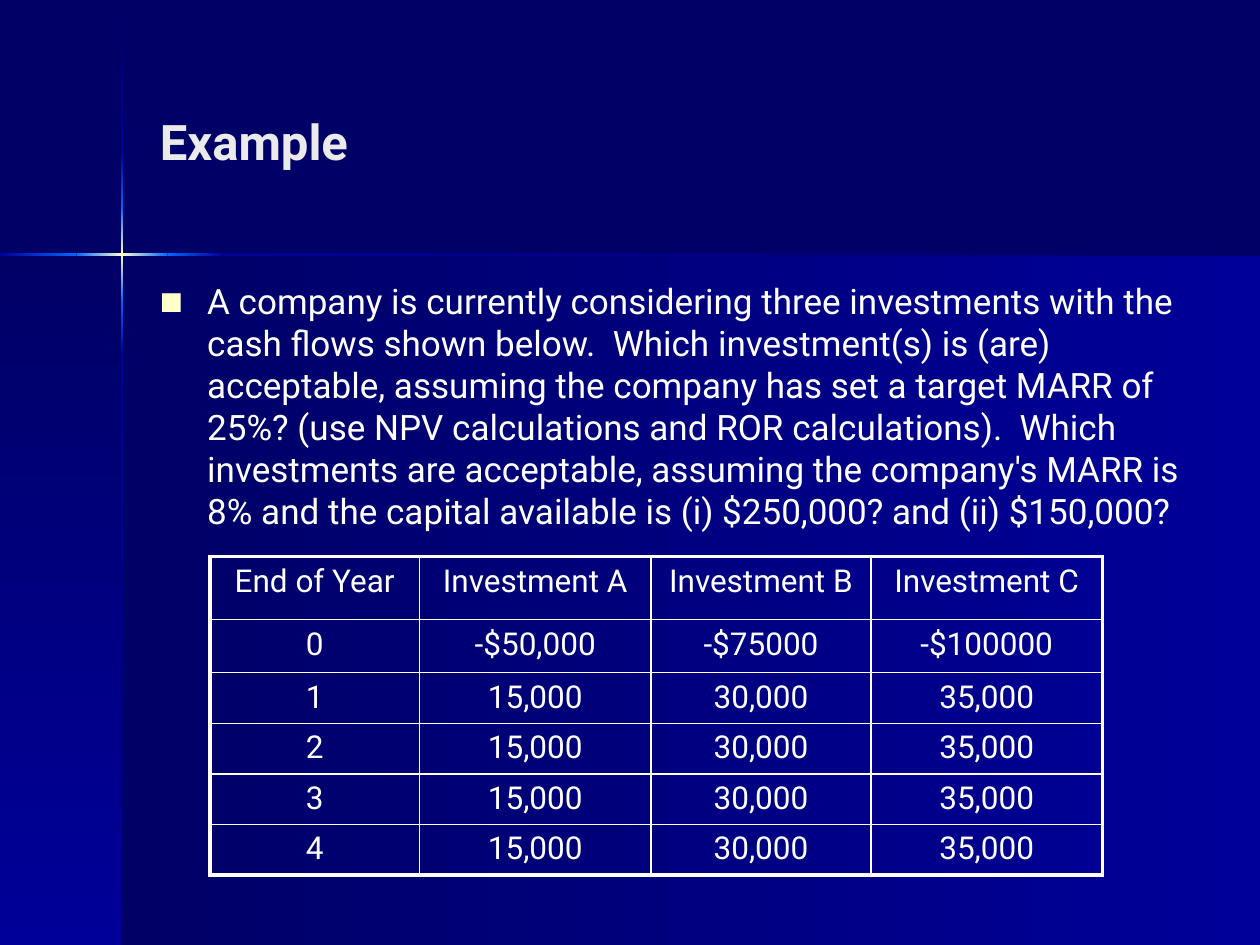
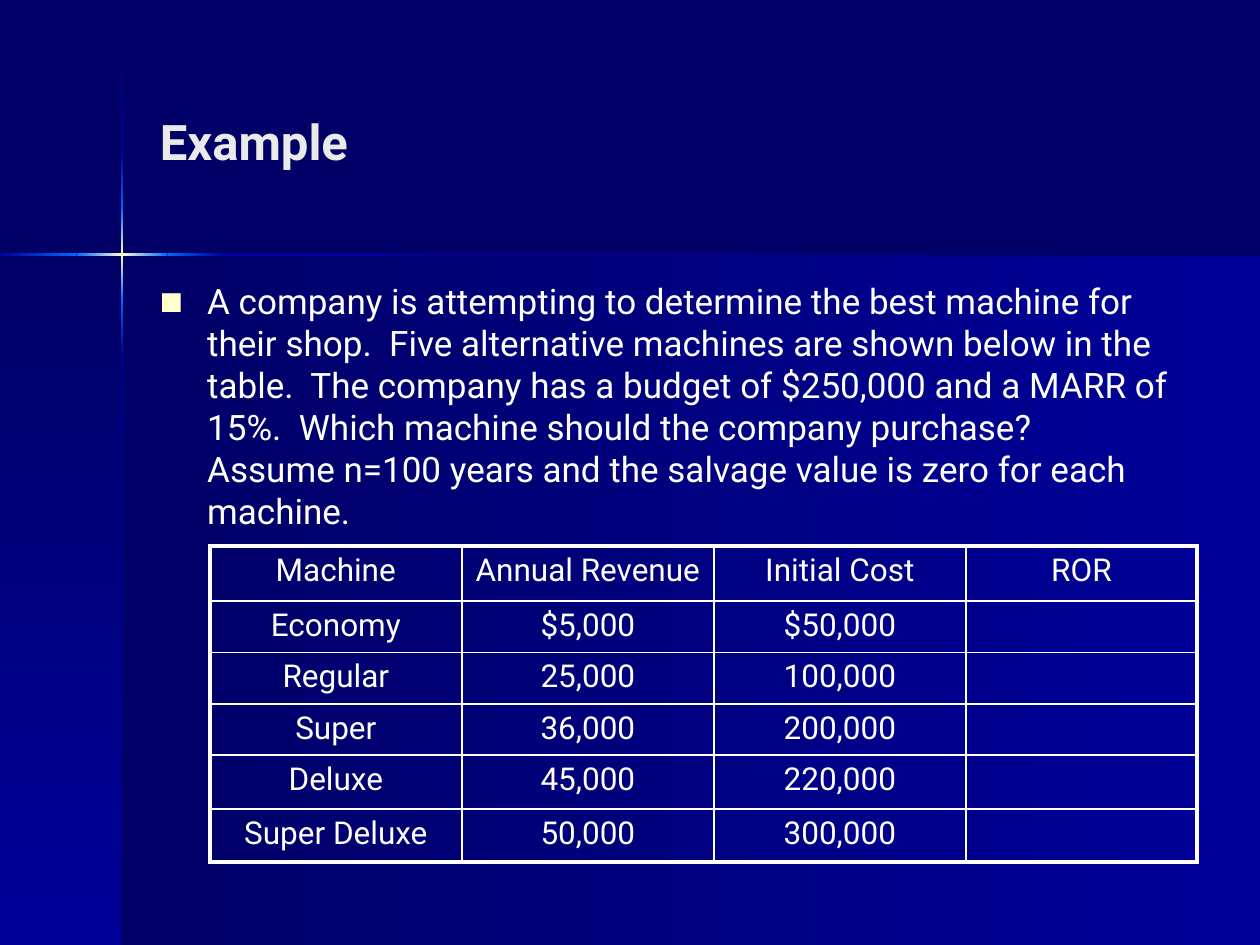
import pptx
import pptx.dml.color
import pptx.enum.shapes
import pptx.enum.text
import pptx.oxml.ns
import pptx.util
from lxml import etree

Cm = pptx.util.Cm
Pt = pptx.util.Pt
RGBColor = pptx.dml.color.RGBColor
qn = pptx.oxml.ns.qn

# Shared look
NAVY = RGBColor(0x00, 0x00, 0x66)
ROYAL = RGBColor(0x00, 0x00, 0x99)
AZURE = RGBColor(0x00, 0x66, 0xFF)
CREAM = RGBColor(0xFF, 0xFF, 0xCC)
PALE = RGBColor(0xEA, 0xEA, 0xEA)
WHITE = RGBColor(0xFF, 0xFF, 0xFF)
FONT = "Roboto"
SLIDE_WIDTH, SLIDE_HEIGHT = 25.4, 19.05
CROSS_X, CROSS_Y = 2.46, 5.13
BEAM = 0.05
THIN, THICK = 1, 2.25

# Beam segments run from each stop to the next
VERTICAL_STOPS = [0.03, 3.07, 4.19, 6.05, 7.16, SLIDE_HEIGHT]
HORIZONTAL_STOPS = [0, 1.54, 3.38, 4.5, SLIDE_WIDTH]
BEAM_COLOURS = [
    (NAVY, ROYAL),
    (ROYAL, AZURE),
    (AZURE, CREAM, AZURE),
    (AZURE, ROYAL),
    (ROYAL, NAVY),
]

# Content
SLIDES = [
    {
        "title": "Example",
        "question": (
            "A company is currently considering three investments with the cash flows "
            "shown below.  Which investment(s) is (are) acceptable, assuming the company "
            "has set a target MARR of 25%? (use NPV calculations and ROR calculations).  "
            "Which investments are acceptable, assuming the company's MARR is 8% and the "
            "capital available is (i) $250,000? and (ii) $150,000?"
        ),
        "body_width": 21.39,
        "table_top": 11.22,
        "columns": [4.23, 4.66, 4.44, 4.66],
        "heights": [1.27, 1.07, 1.02, 1.02, 1.02, 1.02],
        "rows": [
            ("End of Year", "Investment A", "Investment B", "Investment C"),
            ("0", "-$50,000", "-$75000", "-$100000"),
            *[(str(year), "15,000", "30,000", "35,000") for year in range(1, 5)],
        ],
    },
    {
        "title": "Example",
        "question": (
            "A company is attempting to determine the best machine for their shop.  Five "
            "alternative machines are shown below in the table.  The company has a budget "
            "of $250,000 and a MARR of 15%.  Which machine should the company purchase?  "
            "Assume n=100 years and the salvage value is zero for each machine."
        ),
        "body_width": 20.95,
        "table_top": 11.01,
        "columns": [5.08, 5.08, 5.08, 4.66],
        "heights": [1.11, 1.02, 1.04, 1.02, 1.09, 1.07],
        "rows": [
            ("Machine", "Annual Revenue", "Initial Cost", "ROR"),
            ("Economy", "$5,000", "$50,000", ""),
            ("Regular", "25,000", "100,000", ""),
            ("Super", "36,000", "200,000", ""),
            ("Deluxe", "45,000", "220,000", ""),
            ("Super Deluxe", "50,000", "300,000", ""),
        ],
    },
]


def add_element(parent, tag, **attributes):
    return etree.SubElement(parent, qn(tag), attributes)


def add_colour(parent, colour):
    add_element(parent, "a:srgbClr", val=str(colour))


def add_span(para, text, size, colour, bold=False):
    span = para.add_run()
    span.text = text
    span.font.name = FONT
    span.font.size = Pt(size)
    span.font.bold = bold
    span.font.color.rgb = colour


def place(box, left, top, width, height):
    box.left, box.top, box.width, box.height = map(Cm, (left, top, width, height))


def add_band(master, page, left, top, width, height, colours, downward):
    """Draw a gradient band and move it to the master."""
    band = page.shapes.add_shape(
        pptx.enum.shapes.MSO_SHAPE.RECTANGLE, Cm(left), Cm(top), Cm(width), Cm(height))
    band.shadow.inherit = False
    band.line.fill.background()
    band.fill.gradient()
    band.fill.gradient_angle = 270 if downward else 0
    stops = band.element.spPr.find(qn("a:gradFill")).find(qn("a:gsLst"))
    for stop in list(stops):
        stops.remove(stop)
    for index, colour in enumerate(colours):
        position = 100000 * index // (len(colours) - 1)
        add_colour(add_element(stops, "a:gs", pos=str(position)), colour)
    master.shapes.element.append(band.element)


def decorate_master(master, page):
    master.background.fill.solid()
    master.background.fill.fore_color.rgb = NAVY

    # Lower panels
    panel_height = SLIDE_HEIGHT - CROSS_Y
    add_band(master, page, CROSS_X, CROSS_Y, SLIDE_WIDTH - CROSS_X, panel_height,
             (NAVY, ROYAL), False)
    add_band(master, page, 0, CROSS_Y, CROSS_X, panel_height, (NAVY, ROYAL), True)

    # Crossing light beams
    for start, end, colours in zip(VERTICAL_STOPS, VERTICAL_STOPS[1:], BEAM_COLOURS):
        add_band(master, page, CROSS_X - BEAM / 2, start, BEAM, end - start, colours, True)
    for start, end, colours in zip(HORIZONTAL_STOPS, HORIZONTAL_STOPS[1:], BEAM_COLOURS[1:]):
        add_band(master, page, start, CROSS_Y - BEAM / 2, end - start, BEAM, colours, False)


def fill_title(box, text):
    place(box, 2.97, 0.84, 20.95, 3.99)
    frame = box.text_frame
    frame.auto_size = pptx.enum.text.MSO_AUTO_SIZE.NONE
    frame.vertical_anchor = pptx.enum.text.MSO_ANCHOR.MIDDLE
    para = frame.paragraphs[0]
    para.alignment = pptx.enum.text.PP_ALIGN.LEFT
    add_span(para, text, 28, PALE, bold=True)


def fill_question(box, text, width):
    place(box, 2.97, 5.51, width, 11.43)
    box.text_frame.auto_size = pptx.enum.text.MSO_AUTO_SIZE.NONE
    para = box.text_frame.paragraphs[0]
    add_span(para, text, 20, WHITE)
    properties = para._p.get_or_add_pPr()
    add_colour(add_element(properties, "a:buClr"), CREAM)
    add_element(properties, "a:buSzPct", val="70000")
    add_element(properties, "a:buFont", typeface=FONT)
    add_element(properties, "a:buChar", char="■")


def add_borders(cell, outer_sides):
    properties = cell._tc.get_or_add_tcPr()
    for side in "LRTB":
        weight = THICK if side in outer_sides else THIN
        line = add_element(properties, "a:ln" + side, w=str(Pt(weight)))
        add_colour(add_element(line, "a:solidFill"), WHITE)


def fill_cell(cell, text):
    cell.fill.background()
    para = cell.text_frame.paragraphs[0]
    para.alignment = pptx.enum.text.PP_ALIGN.CENTER
    spacing = add_element(para._p.get_or_add_pPr(), "a:spcBef")
    add_element(spacing, "a:spcPct", val="20000")
    if text:
        add_span(para, text, 18, WHITE)


def add_grid(page, top, columns, heights, rows):
    grid = page.shapes.add_table(
        len(rows), len(columns), Cm(4.23), Cm(top), Cm(sum(columns)), Cm(sum(heights))).table
    grid.first_row = grid.horz_banding = False
    for column, width in zip(grid.columns, columns):
        column.width = Cm(width)
    for row, height in zip(grid.rows, heights):
        row.height = Cm(height)
    last_row, last_column = len(rows) - 1, len(columns) - 1
    for r, row in enumerate(rows):
        for c, text in enumerate(row):
            edges = {"L": c == 0, "R": c == last_column, "T": r == 0, "B": r == last_row}
            cell = grid.cell(r, c)
            add_borders(cell, [side for side, outer in edges.items() if outer])
            fill_cell(cell, text)


def main():
    deck = pptx.Presentation()
    deck.slide_width, deck.slide_height = Cm(SLIDE_WIDTH), Cm(SLIDE_HEIGHT)
    for content in SLIDES:
        page = deck.slides.add_slide(deck.slide_layouts[1])
        fill_title(page.shapes.title, content["title"])
        fill_question(page.placeholders[1], content["question"], content["body_width"])
        add_grid(page, content["table_top"], content["columns"],
                 content["heights"], content["rows"])
    decorate_master(deck.slide_master, deck.slides[0])
    deck.save("out.pptx")


if __name__ == "__main__":
    main()
